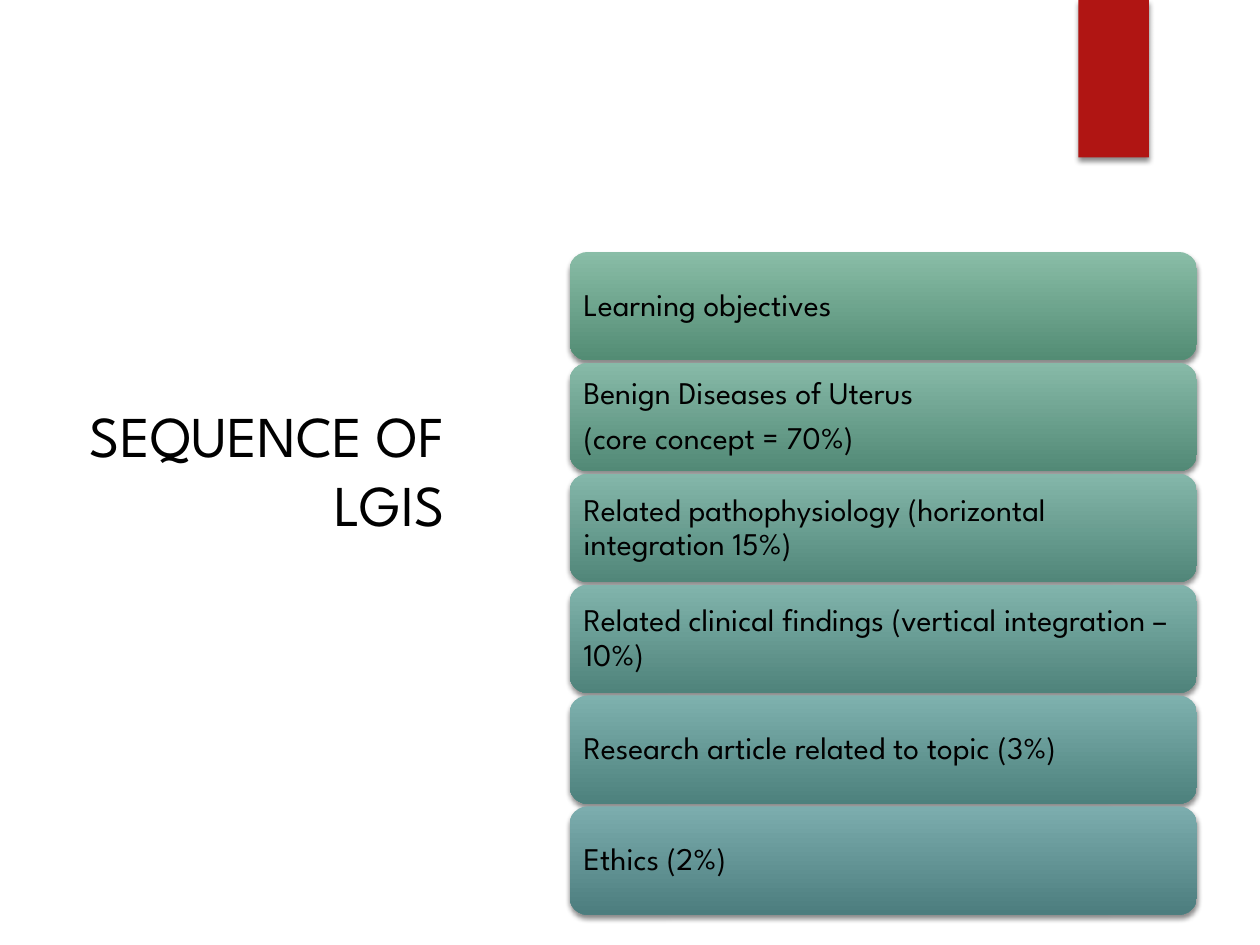
from dataclasses import dataclass

from lxml import etree
from pptx import Presentation
from pptx.dml.color import RGBColor
from pptx.enum.shapes import MSO_SHAPE
from pptx.enum.text import MSO_ANCHOR, MSO_AUTO_SIZE, PP_ALIGN
from pptx.oxml.ns import qn
from pptx.shapes.autoshape import Shape
from pptx.util import Inches, Pt

RECT, ROUND_RECT = MSO_SHAPE.RECTANGLE, MSO_SHAPE.ROUNDED_RECTANGLE
MIDDLE, NO_FIT = MSO_ANCHOR.MIDDLE, MSO_AUTO_SIZE.NONE
LEFT, RIGHT = PP_ALIGN.LEFT, PP_ALIGN.RIGHT

FONT = "League Spartan"
BLACK, RED = "000000", "B01513"
TITLE_ONLY = 5

CARD_LEFT, CARD_TOP = 4.52, 2.0
CARD_WIDTH, CARD_HEIGHT = 4.98, 0.86
CARD_PITCH = 0.88
CARD_PARAGRAPH = {"alignment": LEFT, "line_spacing": 0.9, "space_after": Pt(6.3)}
CARD_FRAME = {"word_wrap": True, "vertical_anchor": MIDDLE} | {
    f"margin_{side}": Inches(0.07) for side in ("left", "right", "top", "bottom")
}


@dataclass
class Card:
    lines: list[str]
    top_color: str
    bottom_color: str


CARDS = [
    Card(["Learning objectives"], "89BDA7", "538C74"),
    Card(["Benign Diseases of Uterus", "(core concept = 70%)"], "87BAA8", "528976"),
    Card(["Related pathophysiology (horizontal integration 15%)"], "84B7AA", "518679"),
    Card(["Related clinical findings (vertical integration – 10%)"], "81B4AC", "4F837B"),
    Card(["Research article related to topic (3%)"], "7EB1AE", "4D817D"),
    Card(["Ethics (2%)"], "7CADAE", "4C7D7E"),
]


def rgb(color: str) -> RGBColor:
    return RGBColor.from_string(color)


def apply(target, values: dict) -> None:
    for name, value in values.items():
        setattr(target, name, value)


def write(tf, lines: list[str], size: float, paragraph: dict) -> None:
    for i, line in enumerate(lines):
        p = tf.paragraphs[0] if i == 0 else tf.add_paragraph()
        apply(p, paragraph)
        r = p.add_run()
        r.text = line
        apply(r.font, {"name": FONT, "size": Pt(size)})
        r.font.color.rgb = rgb(BLACK)


def add_shadow(sp: Shape) -> None:
    sp.shadow.inherit = False
    effects = sp._element.spPr.find(qn("a:effectLst"))
    shadow = etree.SubElement(
        effects, qn("a:outerShdw"), blurRad=str(Pt(3)), dist=str(Pt(2)),
        dir="5400000", algn="ctr", rotWithShape="0",
    )
    color = etree.SubElement(shadow, qn("a:srgbClr"), val=BLACK)
    etree.SubElement(color, qn("a:alpha"), val="45000")


def add_block(s, kind, left: float, top: float, width: float, height: float) -> Shape:
    sp = s.shapes.add_shape(kind, Inches(left), Inches(top), Inches(width), Inches(height))
    sp.line.fill.background()
    add_shadow(sp)
    return sp


def add_card(s, card: Card, top: float) -> None:
    sp = add_block(s, ROUND_RECT, CARD_LEFT, top, CARD_WIDTH, CARD_HEIGHT)
    sp.fill.gradient()
    sp.fill.gradient_angle = 270
    for stop, color in zip(sp.fill.gradient_stops, (card.top_color, card.bottom_color)):
        stop.color.rgb = rgb(color)
    apply(sp.text_frame, CARD_FRAME)
    write(sp.text_frame, card.lines, 18, CARD_PARAGRAPH)


def main() -> None:
    prs = Presentation()
    apply(prs, {"slide_width": Inches(10), "slide_height": Inches(7.5)})
    s = prs.slides.add_slide(prs.slide_layouts[TITLE_ONLY])

    # Red tab at the top edge
    tab = add_block(s, RECT, 8.56, 0, 0.56, 1.25)
    tab.fill.solid()
    tab.fill.fore_color.rgb = rgb(RED)

    # Title
    title = s.shapes.title
    apply(title, {"left": Inches(0.56), "top": Inches(2.63),
                  "width": Inches(3.07), "height": Inches(2.18)})
    apply(title.text_frame, {"word_wrap": True, "auto_size": NO_FIT, "vertical_anchor": MIDDLE})
    write(title.text_frame, ["SEQUENCE OF LGIS"], 33, {"alignment": RIGHT})

    # Stack of session steps
    for i, card in enumerate(CARDS):
        add_card(s, card, CARD_TOP + i * CARD_PITCH)

    prs.save("out.pptx")


if __name__ == "__main__":
    main()
